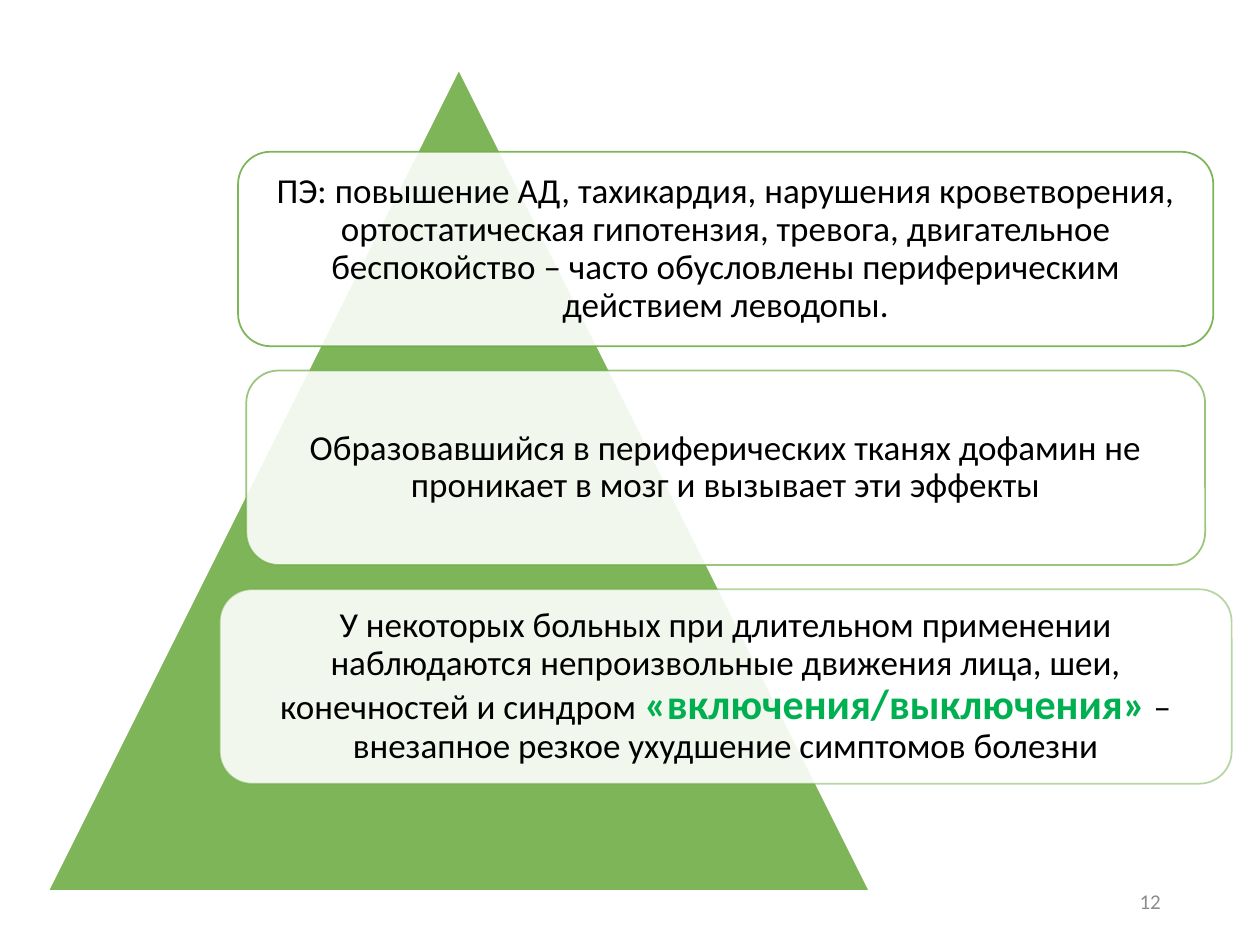
from lxml.etree import SubElement
from pptx import Presentation
from pptx.dml.color import RGBColor
from pptx.enum.shapes import MSO_SHAPE
from pptx.enum.text import MSO_ANCHOR, PP_ALIGN
from pptx.oxml.ns import qn
from pptx.util import Cm, Pt

GREEN = RGBColor(0x70, 0xAD, 0x47)
ACCENT = RGBColor(0x00, 0xB0, 0x50)
WHITE = RGBColor(0xFF, 0xFF, 0xFF)
BLACK = RGBColor(0x00, 0x00, 0x00)
GRAY = RGBColor(0x8C, 0x8C, 0x8C)


def add_panel(kind, box, fill, line, line_opacity):
    panel = slide.shapes.add_shape(kind, *[Cm(length) for length in box])
    panel.shadow.inherit = False
    panel.fill.solid()
    panel.fill.fore_color.rgb = fill
    panel.line.color.rgb = line
    panel.line.width = Pt(1)
    properties = panel.element.spPr
    for part, opacity in ((properties, 90), (properties.find(qn("a:ln")), line_opacity)):
        color = part.find(qn("a:solidFill")).find(qn("a:srgbClr"))
        SubElement(color, qn("a:alpha"), val=str(opacity * 1000))
    return panel


def add_run(paragraph, text, size, color, bold=False):
    run = paragraph.add_run()
    run.text = text
    run.font.name = "Calibri"
    run.font.size = Pt(size)
    run.font.bold = bold
    run.font.color.rgb = color


prs = Presentation()
prs.slide_width, prs.slide_height = Cm(25.4), Cm(19.05)
slide = prs.slides.add_slide(prs.slide_layouts[6])

number = slide.shapes.add_textbox(Cm(17.93), Cm(17.65), Cm(5.72), Cm(1.02)).text_frame
number.word_wrap = True
number.vertical_anchor = MSO_ANCHOR.MIDDLE
number.paragraphs[0].alignment = PP_ALIGN.RIGHT
add_run(number.paragraphs[0], "12", 12, GRAY)

add_panel(MSO_SHAPE.ISOSCELES_TRIANGLE, (0.97, 1.4, 16.56, 16.56), GREEN, WHITE, 100)

effects = [
    (19.66, 90, [
        ("ПЭ: повышение АД, тахикардия, нарушения кроветворения, ортостатическая "
         "гипотензия, тревога, двигательное беспокойство – часто обусловлены "
         "периферическим действием леводопы.", 20, BLACK, False),
    ]),
    (19.33, 70, [
        ("Образовавшийся в периферических тканях дофамин не проникает в мозг "
         "и вызывает эти эффекты", 20, BLACK, False),
    ]),
    (20.4, 50, [
        ("У некоторых больных при длительном применении наблюдаются непроизвольные "
         "движения лица, шеи, конечностей и синдром ", 20, BLACK, False),
        ("«включения/выключения»", 24, ACCENT, True),
        (" – внезапное резкое ухудшение симптомов болезни", 20, BLACK, False),
    ]),
]
center, top, height, pitch = 14.63, 3.06, 3.92, 4.41

for row, (width, line_opacity, runs) in enumerate(effects):
    box = (center - width / 2, top + row * pitch, width, height)
    effect = add_panel(MSO_SHAPE.ROUNDED_RECTANGLE, box, WHITE, GREEN, line_opacity).text_frame
    effect.word_wrap = True
    effect.vertical_anchor = MSO_ANCHOR.MIDDLE
    effect.margin_left = effect.margin_right = Cm(0.2)
    effect.margin_top = effect.margin_bottom = Cm(0.2)
    paragraph = effect.paragraphs[0]
    paragraph.alignment = PP_ALIGN.CENTER
    paragraph.line_spacing = 0.9
    for run in runs:
        add_run(paragraph, *run)

prs.save("out.pptx")
